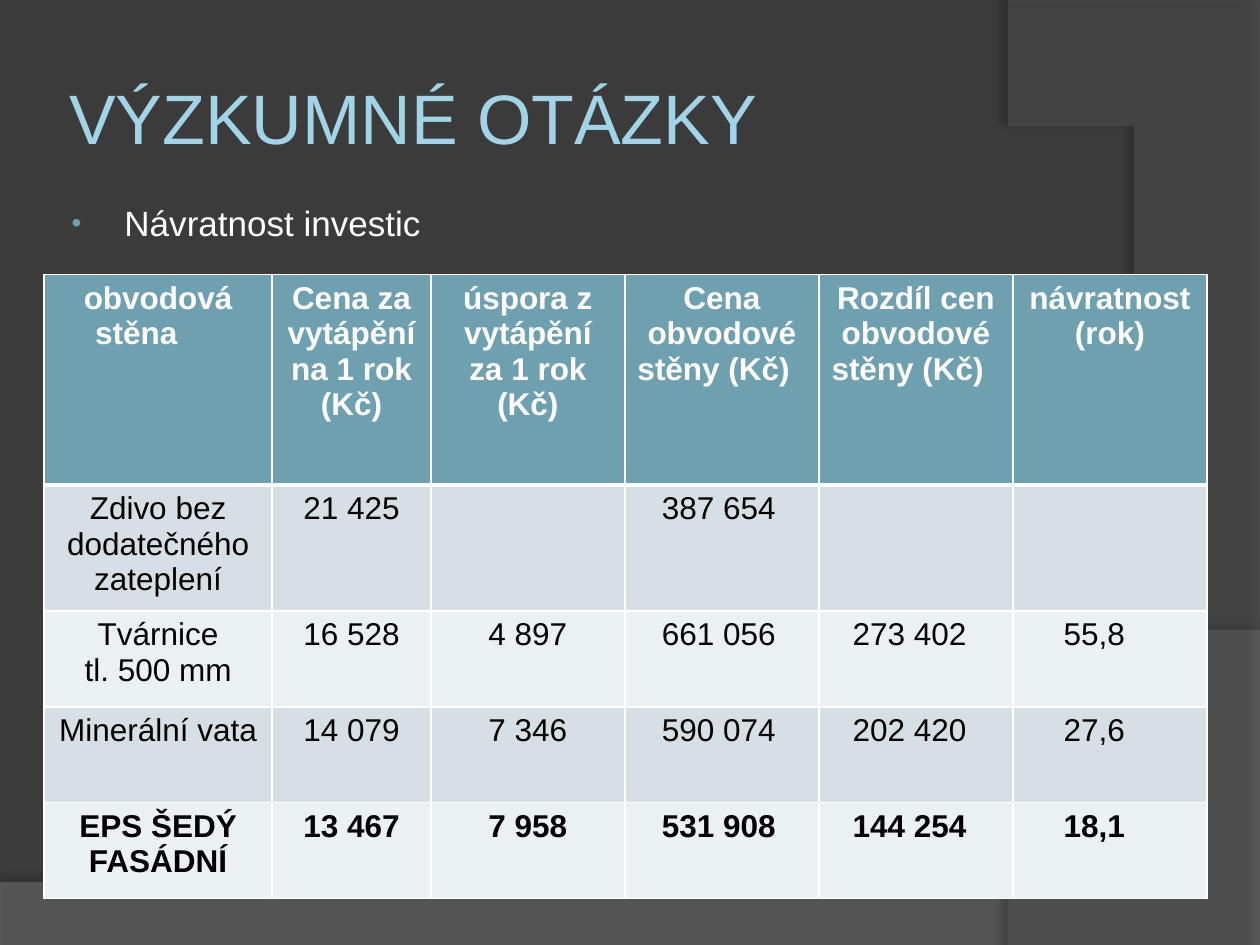
from lxml import etree
from pptx import Presentation
from pptx import util as u
from pptx.dml.color import RGBColor
from pptx.enum import text
from pptx.oxml import parse_xml
from pptx.oxml.ns import qn

WIDE, HIGH = 10, 7.5
FONT = "Arial"
NS = 'xmlns:a="http://schemas.openxmlformats.org/drawingml/2006/main"'
WHITE, BLACK, TEAL, SKY = "FFFFFF", "000000", "6EA0B0", "A1D4E7"
BANDS = ["D5DFE4", "EBF0F2"]

COLS = [1.81, 1.26] + [1.54] * 4
ROWS = [1.67] + [0.76] * 4
# Extra right margin that pulls the figures of a column to the left
PULL = [0, 0, 0, 0.05, 0.1, 0.25]
DATA = [
    ["obvodová stěna \t", "Cena za vytápění na 1 rok (Kč)",
     "úspora z vytápění za 1 rok (Kč)", "Cena obvodové stěny (Kč) \t",
     "Rozdíl cen obvodové stěny (Kč) \t", "návratnost (rok)"],
    ["Zdivo bez dodatečného zateplení", "21 425", "", "387 654", "", ""],
    ["Tvárnice\ntl. 500 mm", "16 528", "4 897", "661 056", "273 402", "55,8"],
    ["Minerální vata", "14 079", "7 346", "590 074", "202 420", "27,6"],
    ["EPS ŠEDÝ FASÁDNÍ", "13 467", "7 958", "531 908", "144 254", "18,1"],
]


def color(code):
    return RGBColor.from_string(code)


def style(par, size, code, bold=False):
    for run in par.runs:
        font = run.font
        font.name, font.size, font.bold = FONT, u.Pt(size), bold
        font.color.rgb = color(code)


def place(shape, left, top, width, height):
    shape.left, shape.top = u.Inches(left), u.Inches(top)
    shape.width, shape.height = u.Inches(width), u.Inches(height)


def curve(a, b, c, d, steps=40):
    """Points of a cubic Bezier curve, without its start."""
    points = []
    for n in range(1, steps + 1):
        t = n / steps
        s = 1 - t
        points.append(tuple(s**3 * p + 3 * s * s * t * q + 3 * s * t * t * r + t**3 * v
                            for p, q, r, v in zip(a, b, c, d)))
    return points


def swoosh(slide, points, code, alpha, shade, dist, angle):
    """Translucent background outline with a soft shadow."""
    pen = slide.shapes.build_freeform(*points[0], scale=u.Inches(1))
    pen.add_line_segments(points[1:], close=True)
    shape = pen.convert_to_shape()
    shape.fill.solid()
    shape.fill.fore_color.rgb = color(code)
    shape.line.fill.background()
    tint = shape.fill._xPr.find(".//" + qn("a:srgbClr"))
    etree.SubElement(tint, qn("a:alpha"), val=str(alpha * 1000))
    shape._element.spPr.append(parse_xml(
        f'<a:effectLst {NS}><a:outerShdw blurRad="{u.Pt(4)}" dist="{u.Pt(dist)}" '
        f'dir="{angle * 60000}" algn="ctr" rotWithShape="0"><a:srgbClr val="000000">'
        f'<a:alpha val="{shade * 1000}"/></a:srgbClr></a:outerShdw></a:effectLst>'))
    return shape


def backdrop(slide):
    fill = slide.background.fill
    fill.solid()
    fill.fore_color.rgb = color("3B3B3B")
    low = [(0, 7.05), (0, HIGH), (WIDE, HIGH), (WIDE, 5.2)]
    low += curve(low[-1], (5.59, 7.29), (3.91, 7.19), low[0])
    side = [(WIDE, 0.02), (WIDE, HIGH), (8.21, HIGH)]
    side += curve(side[-1], (9.35, 6.19), (10.18, 3), (8, 0))
    parts = [swoosh(slide, low, "7F7F7F", 45, 35, 3.5, 270),
             swoosh(slide, side, "5E5E5E", 40, 45, 4, 180)]
    # Send both behind the title
    for spot, part in enumerate(parts, 2):
        slide.shapes._spTree.insert(spot, part._element)


def heading(slide, words):
    title = slide.shapes.title
    place(title, 0.5, 0.3, 8.17, 1.25)
    frame = title.text_frame
    frame.text = words
    frame.vertical_anchor = text.MSO_ANCHOR.MIDDLE
    frame.margin_left = frame.margin_right = u.Inches(0.05)
    frame.paragraphs[0].alignment = text.PP_ALIGN.LEFT
    style(frame.paragraphs[0], 40, SKY)


def bullet(slide, words):
    box = slide.shapes.add_textbox(0, 0, 0, 0)
    place(box, 0.43, 1.55, 8.17, 0.55)
    frame = box.text_frame
    frame.word_wrap = True
    frame.text = words
    par = frame.paragraphs[0]
    style(par, 20, WHITE)
    props = par._p.get_or_add_pPr()
    props.set("marL", str(u.Inches(0.46)))
    props.set("indent", str(u.Inches(-0.42)))
    for mark in (f'<a:buClr {NS}><a:srgbClr val="{TEAL}"/></a:buClr>',
                 f'<a:buSzPct {NS} val="80000"/>',
                 f'<a:buFont {NS} typeface="{FONT}"/>',
                 f'<a:buChar {NS} char="•"/>'):
        props.append(parse_xml(mark))


def border(cell, row):
    """White rules, thick between the head and the body."""
    widths = {"L": 1, "R": 1, "T": 3 if row == 1 else 1, "B": 3 if row == 0 else 1}
    props = cell._tc.get_or_add_tcPr()
    for spot, (side, width) in enumerate(widths.items()):
        props.insert(spot, parse_xml(
            f'<a:ln{side} {NS} w="{u.Pt(width)}"><a:solidFill>'
            f'<a:srgbClr val="{WHITE}"/></a:solidFill></a:ln{side}>'))


def grid(slide):
    frame = slide.shapes.add_table(
        len(ROWS), len(COLS), u.Inches(0.35), u.Inches(2.18),
        u.Inches(sum(COLS)), u.Inches(sum(ROWS)))
    table = frame.table
    for col, width in zip(table.columns, COLS):
        col.width = u.Inches(width)
    for line, height in zip(table.rows, ROWS):
        line.height = u.Inches(height)
    for row, line in enumerate(DATA):
        head = row == 0
        for col, words in enumerate(line):
            cell = table.cell(row, col)
            cell.fill.solid()
            cell.fill.fore_color.rgb = color(TEAL if head else BANDS[(row - 1) % 2])
            border(cell, row)
            if not head:
                cell.margin_right = u.Inches(0.1 + PULL[col])
            cell.text_frame.text = words
            for par in cell.text_frame.paragraphs:
                par.alignment = text.PP_ALIGN.CENTER
                style(par, 18, WHITE if head else BLACK, row in (0, len(DATA) - 1))


def main():
    deck = Presentation()
    deck.slide_width, deck.slide_height = u.Inches(WIDE), u.Inches(HIGH)
    slide = deck.slides.add_slide(deck.slide_layouts[5])
    backdrop(slide)
    heading(slide, "VÝZKUMNÉ OTÁZKY")
    bullet(slide, "Návratnost investic")
    grid(slide)
    deck.save("out.pptx")


if __name__ == "__main__":
    main()
